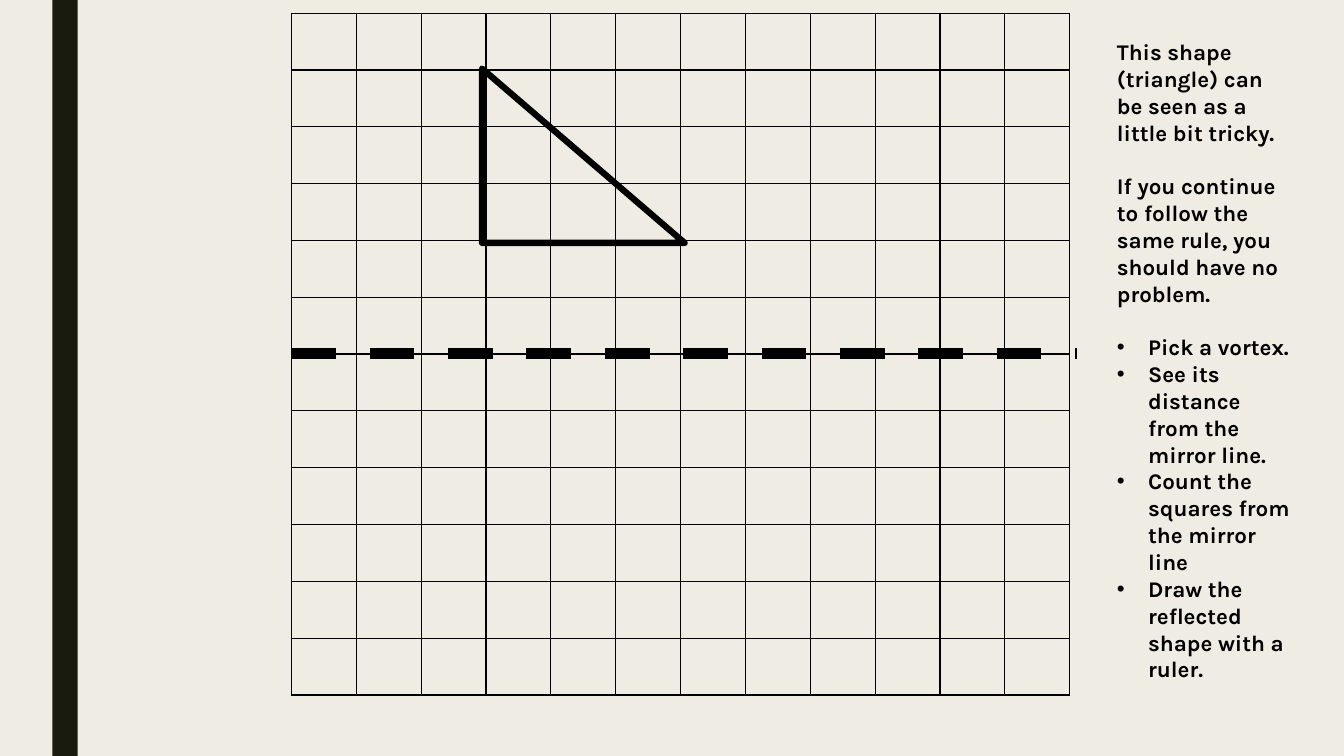
from dataclasses import dataclass

from lxml import etree
from pptx import Presentation
from pptx import util as u
from pptx.dml.color import RGBColor
from pptx.enum import dml, shapes, text
from pptx.oxml import ns

PX = 9144  # 100 px to the inch
INK = "000000"
SIDES = ("a:lnL", "a:lnR", "a:lnT", "a:lnB")
CELLS = 12


@dataclass
class Box:
    x: int
    y: int
    w: int
    h: int

    def emu(self) -> tuple[int, ...]:
        return tuple(v * PX for v in (self.x, self.y, self.w, self.h))


@dataclass
class Note:
    words: str
    gap: int = 0
    dot: bool = False


BAR = Box(52, 0, 25, 750)
GRID = Box(289, 13, 772, 677)
TRIANGLE = Box(478, 68, 201, 173)
ADVICE = Box(1098, 33, 193, 619)
NOTES = [
    Note("This shape (triangle) can be seen as a little bit tricky."),
    Note("If you continue to follow the same rule, you should have no problem.", gap=19),
    Note("Pick a vortex.", gap=19, dot=True),
    Note("See its distance from the mirror line.", dot=True),
    Note("Count the squares from the mirror line", dot=True),
    Note("Draw the reflected shape with a ruler.", dot=True),
]


def rgb(code: str) -> RGBColor:
    return RGBColor.from_string(code)


def add(node, tag: str, **attrs: str):
    return etree.SubElement(node, ns.qn(tag), attrs)


def draw_bar(slide, box: Box) -> None:
    bar = slide.shapes.add_shape(shapes.MSO_SHAPE.RECTANGLE, *box.emu())
    bar.shadow.inherit = False
    bar.fill.solid()
    bar.fill.fore_color.rgb = rgb("191B0E")
    bar.line.fill.background()


def draw_grid(slide, box: Box) -> None:
    table = slide.shapes.add_table(CELLS, CELLS, *box.emu()).table
    table.first_row = table.horz_banding = False
    for col in table.columns:
        col.width = box.w * PX // CELLS
    for row in table.rows:
        row.height = box.h * PX // CELLS
    for cell in table.iter_cells():
        props = cell._tc.get_or_add_tcPr()
        for side in SIDES:
            edge = add(props, side, w=str(u.Pt(1)))
            add(add(edge, "a:solidFill"), "a:srgbClr", val=INK)
        cell.fill.background()


def draw_mirror(slide) -> None:
    y = 351 * PX
    mirror = slide.shapes.add_connector(
        shapes.MSO_CONNECTOR.STRAIGHT, GRID.x * PX, y, 1068 * PX, y)
    mirror.line.color.rgb = rgb(INK)
    mirror.line.width = u.Pt(8)
    mirror.line.dash_style = dml.MSO_LINE.DASH
    add(mirror._element.spPr, "a:effectLst")


def draw_triangle(slide, box: Box) -> None:
    tri = slide.shapes.add_shape(shapes.MSO_SHAPE.RIGHT_TRIANGLE, *box.emu())
    tri.shadow.inherit = False
    tri.fill.background()
    tri.line.color.rgb = rgb(INK)
    tri.line.width = u.Pt(4.5)
    add(tri.line._get_or_add_ln(), "a:round")


def write_notes(slide, box: Box, notes: list[Note]) -> None:
    frame = slide.shapes.add_textbox(*box.emu()).text_frame
    frame.word_wrap = True
    frame.auto_size = text.MSO_AUTO_SIZE.SHAPE_TO_FIT_TEXT
    for i, note in enumerate(notes):
        para = frame.add_paragraph() if i else frame.paragraphs[0]
        para.text = note.words
        para.space_before = u.Pt(note.gap)
        font = para.font
        font.name, font.size, font.bold = "Karla", u.Pt(16), True
        font.color.rgb = rgb(INK)
        if note.dot:
            hang_dot(para)


def hang_dot(para) -> None:
    """Give the paragraph a bullet with a hanging indent."""
    props = para._p.get_or_add_pPr()
    props.set("marL", str(31 * PX))
    props.set("indent", str(-31 * PX))
    face = etree.Element(ns.qn("a:buFont"), typeface="Arial")
    mark = etree.Element(ns.qn("a:buChar"), char="•")
    font = props.find(ns.qn("a:defRPr"))
    font.addprevious(face)
    font.addprevious(mark)


def main() -> None:
    deck = Presentation()
    deck.slide_width, deck.slide_height = 1333 * PX, 750 * PX
    slide = deck.slides.add_slide(deck.slide_layouts[6])
    back = slide.background.fill
    back.solid()
    back.fore_color.rgb = rgb("EFEDE3")
    draw_bar(slide, BAR)
    draw_grid(slide, GRID)
    draw_mirror(slide)
    draw_triangle(slide, TRIANGLE)
    write_notes(slide, ADVICE, NOTES)
    deck.save("out.pptx")


if __name__ == "__main__":
    main()
